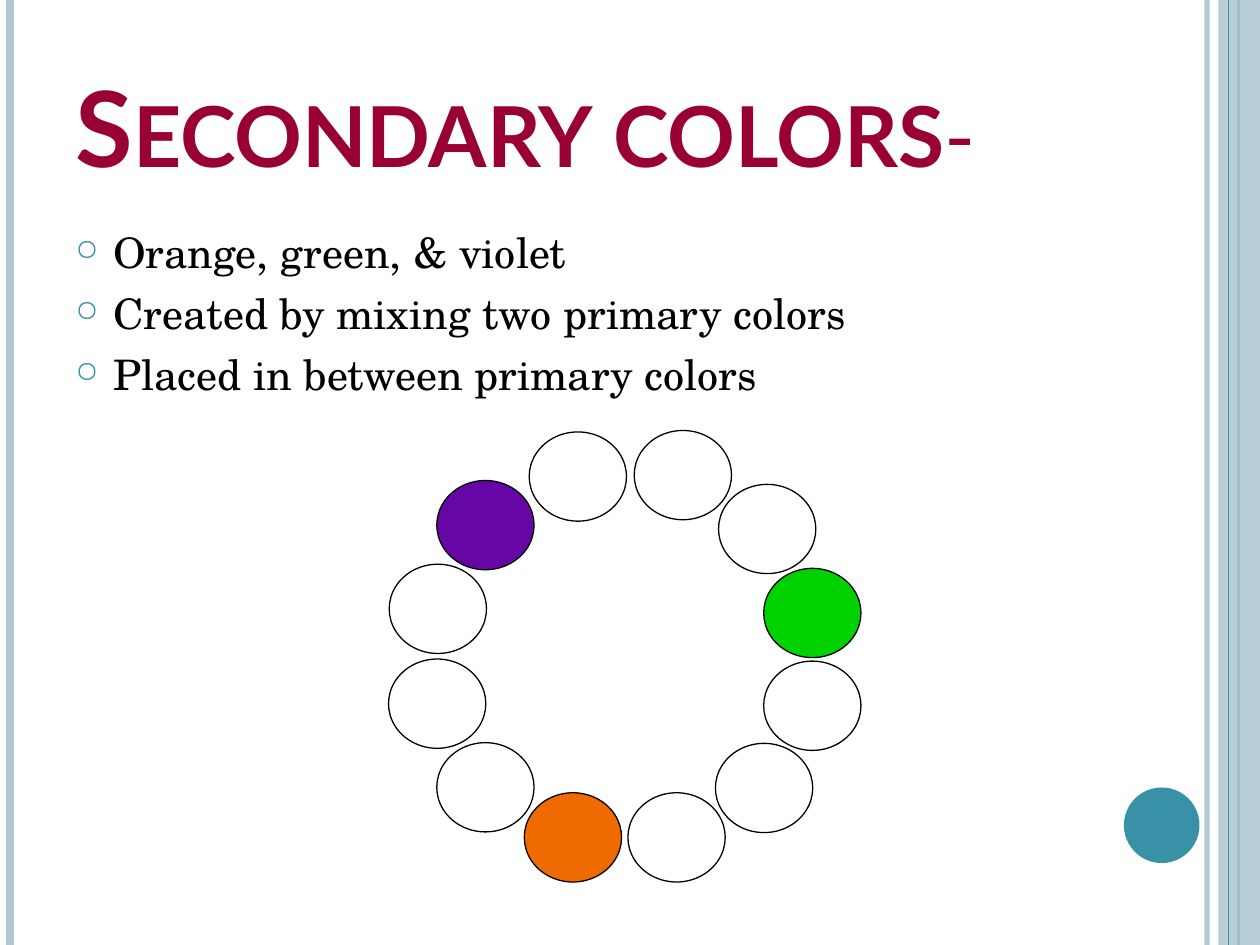
from dataclasses import dataclass

from lxml.etree import SubElement
from pptx import Presentation
from pptx.dml.color import RGBColor as RGB
from pptx.enum.shapes import MSO_CONNECTOR as CONNECTOR, MSO_SHAPE as SHAPE
from pptx.enum.text import MSO_ANCHOR as ANCHOR, MSO_AUTO_SIZE as AUTO, PP_ALIGN as ALIGN
from pptx.oxml.ns import qn
from pptx.util import Pt


@dataclass(frozen=True)
class Theme:
    pale: RGB = RGB(0xAF, 0xC7, 0xD0)
    teal: RGB = RGB(0x38, 0x91, 0xA7)
    crimson: RGB = RGB(0x99, 0x00, 0x33)
    black: RGB = RGB(0, 0, 0)
    green: RGB = RGB(0x00, 0xD2, 0x00)
    orange: RGB = RGB(0xEF, 0x6B, 0x00)
    violet: RGB = RGB(0x66, 0x07, 0xA5)
    title_font: str = "Lato"
    body_font: str = "TeX Gyre Schola"
    title_size: int = 60
    body_size: int = 24


theme = Theme()


def add_plain(parent, kind, left, top, width, height, fill=None, line=None):
    """Add a flat shape; without a colour, its fill or outline is left off."""
    shape = parent.add_shape(kind, Pt(left), Pt(top), Pt(width), Pt(height))
    shape.shadow.inherit = False
    if fill is None:
        shape.fill.background()
    else:
        shape.fill.solid()
        shape.fill.fore_color.rgb = fill
    if line is None:
        shape.line.fill.background()
    else:
        shape.line.color.rgb = line
        shape.line.width = Pt(0.75)
    return shape


def set_opacity(element, percent):
    color = next(element.iter(qn("a:srgbClr")))
    SubElement(color, qn("a:alpha"), val=str(percent * 1000))


prs = Presentation()
prs.slide_width, prs.slide_height = Pt(720), Pt(540)
slide = prs.slides.add_slide(prs.slide_layouts[5])

# Side stripes: x, width, colour, opacity
stripes = [
    (689.76, 3, theme.pale, 93),
    (5.76, 4.5, theme.pale, 100),
    (707.76, 1.5, theme.teal, 100),
    (702, 0.75, theme.teal, 100),
]
for x, width, color, opacity in stripes:
    stripe = slide.shapes.add_connector(CONNECTOR.STRAIGHT, Pt(x), Pt(0), Pt(x), Pt(540))
    stripe.line.color.rgb = color
    stripe.line.width = Pt(width)
    properties = stripe._element.spPr
    SubElement(properties, qn("a:effectLst"))
    if opacity < 100:
        set_opacity(properties, opacity)
    # The wide band lies between the two pairs of stripes
    if x == 707.76:
        band = add_plain(slide.shapes, SHAPE.RECTANGLE, 696.24, 0, 23.76, 540, theme.pale)
        set_opacity(band._element.spPr, 87)

# Corner dot
add_plain(slide.shapes, SHAPE.OVAL, 642.24, 450, 43.2, 43.2, theme.teal)

# Title
title = slide.shapes.title
title.left, title.top, title.width, title.height = Pt(36), Pt(21.6), Pt(588), Pt(90)
title.text_frame.auto_size = AUTO.NONE
title.text_frame.vertical_anchor = ANCHOR.BOTTOM
heading = title.text_frame.paragraphs[0]
heading.alignment = ALIGN.LEFT
for words, bold in [("Secondary colors", True), ("-", False)]:
    run = heading.add_run()
    run.text = words
    run.font.name = theme.title_font
    run.font.size = Pt(theme.title_size)
    run.font.bold = bold
    run.font.color.rgb = theme.crimson
    run.font._element.set("cap", "small")

# Facts about secondary colors
facts = slide.shapes.add_textbox(Pt(36), Pt(126), Pt(588), Pt(384)).text_frame
facts.word_wrap = True
facts.text = "\n".join([
    "Orange, green, & violet",
    "Created by mixing two primary colors",
    "Placed in between primary colors",
])
indent = Pt(21.6)
for fact in facts.paragraphs:
    fact.space_before = Pt(6)
    fact.font.name = theme.body_font
    fact.font.size = Pt(theme.body_size)
    fact.font.color.rgb = theme.black
    for run in fact.runs:
        run.font.name = theme.body_font
        run.font.size = Pt(theme.body_size)
        run.font.color.rgb = theme.black
    layout = fact._p.get_or_add_pPr()
    layout.set("marL", str(indent))
    layout.set("indent", str(-indent))
    bullet_color = SubElement(layout, qn("a:buClr"))
    SubElement(bullet_color, qn("a:srgbClr"), val=str(theme.teal))
    SubElement(layout, qn("a:buSzPct"), val="70000")
    SubElement(layout, qn("a:buChar"), char="○")
    # Paragraph defaults come last in the schema order
    defaults = layout.find(qn("a:defRPr"))
    if defaults is not None:
        layout.append(defaults)

# Color wheel, clockwise from the top left: x, y, colour
wheel = slide.shapes.add_group_shape().shapes
spots = [
    (302.4, 246.8, None),
    (362.4, 246, None),
    (410.6, 276.8, None),
    (436.4, 324.8, theme.green),
    (436.4, 377.8, None),
    (408.8, 424.8, None),
    (358.8, 453, None),
    (299.6, 453, theme.orange),
    (249.6, 424.4, None),
    (222, 376.6, None),
    (222.4, 322.4, None),
    (249.6, 274.6, theme.violet),
]
for x, y, color in spots:
    add_plain(wheel, SHAPE.OVAL, x, y, 55.6, 51, color, theme.black)

prs.save("out.pptx")
